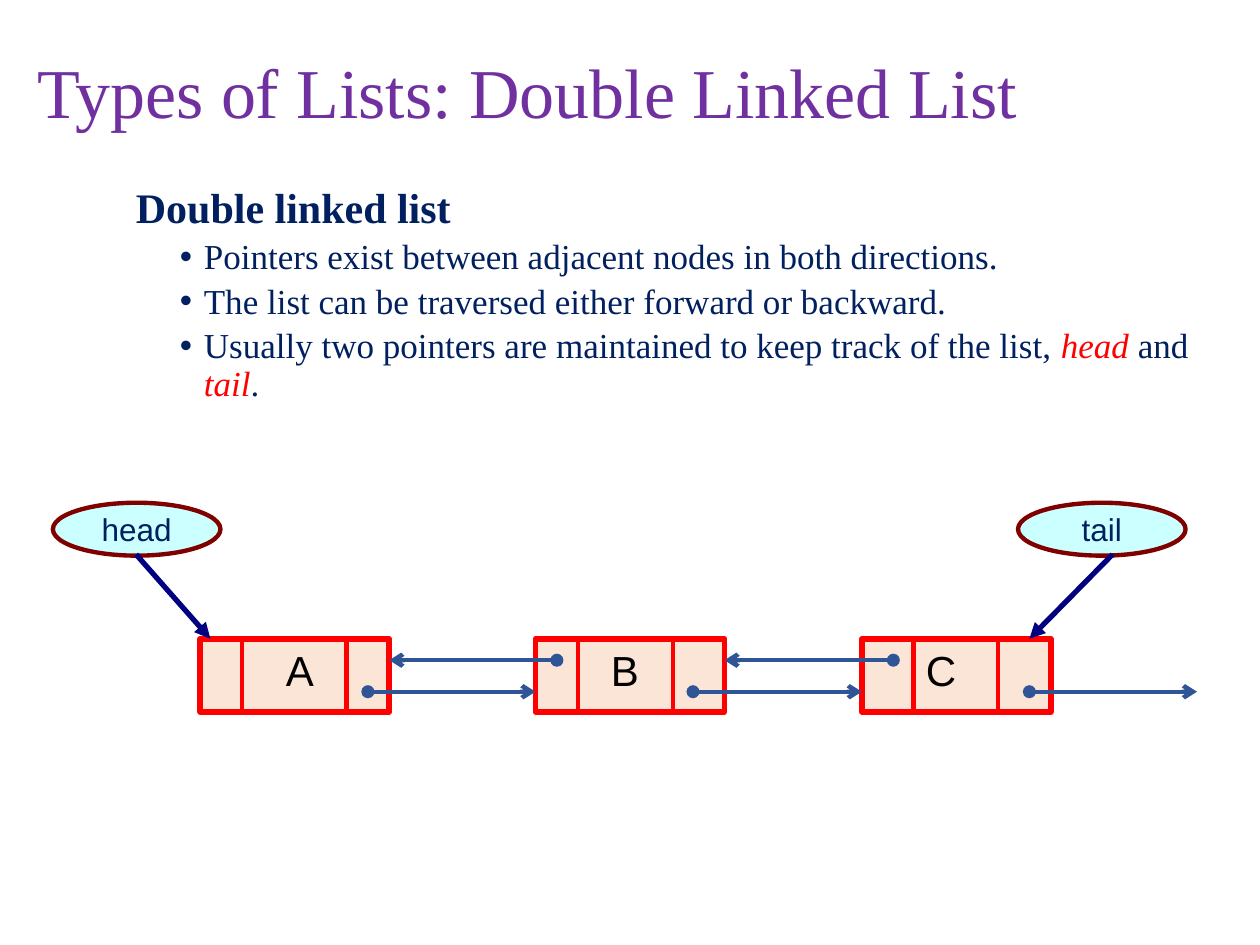
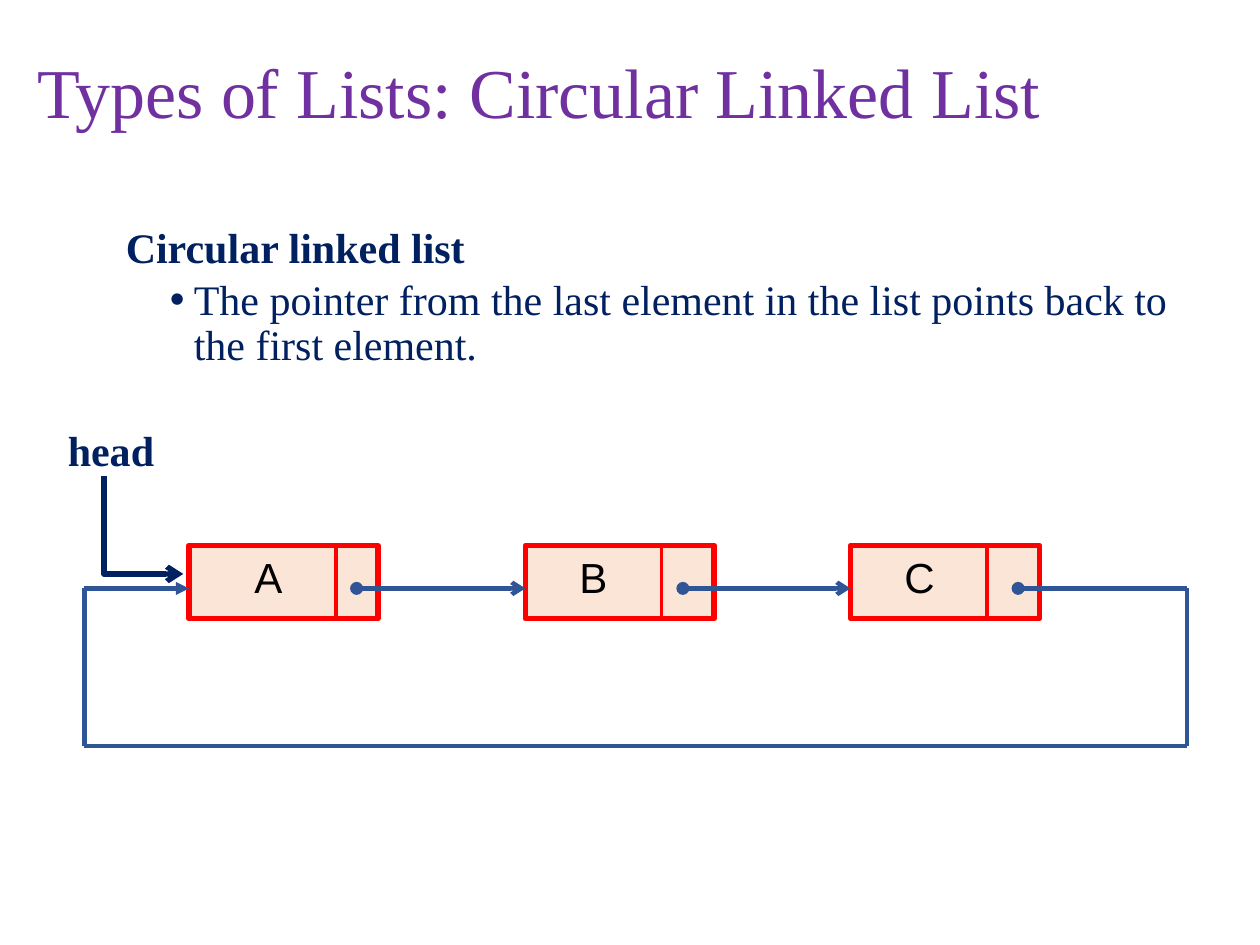
"""Two slides on double and circular linked lists."""
from lxml.etree import SubElement
from pptx import Presentation
from pptx.dml.color import RGBColor
from pptx.enum.shapes import MSO_CONNECTOR as Connector, MSO_SHAPE as Shape
from pptx.enum.text import MSO_ANCHOR as Anchor, PP_ALIGN as Align
from pptx.oxml.ns import qn
from pptx.util import Inches, Pt

PURPLE = RGBColor(0x70, 0x30, 0xA0)
NAVY = RGBColor(0x00, 0x20, 0x60)
DARK_BLUE = RGBColor(0x00, 0x00, 0x80)
LINK_BLUE = RGBColor(0x2F, 0x55, 0x97)
RED = RGBColor(0xFF, 0x00, 0x00)
MAROON = RGBColor(0x80, 0x00, 0x00)
PEACH = RGBColor(0xFB, 0xE5, 0xD6)
PALE_CYAN = RGBColor(0xCC, 0xFF, 0xFF)
BLACK = RGBColor(0x00, 0x00, 0x00)
SERIF, SANS = "Times New Roman", "Arial"
NODE_WIDTH, NODE_HEIGHT = 1.5, 0.58


def add_text(para, runs, size, font, color, bold=False):
    """Add runs to a paragraph; a run in a tuple is emphasised."""
    for run in runs:
        emphasised = isinstance(run, tuple)
        span = para.add_run()
        span.text = run[0] if emphasised else run
        span.font.size = Pt(size)
        span.font.name = font
        span.font.bold = bold
        span.font.italic = emphasised
        span.font.color.rgb = RED if emphasised else color


def add_line(page, start, end, color, width, head=None, tail=None, kind=Connector.STRAIGHT):
    """Draw a shadowless connector with optional line ends."""
    line = page.shapes.add_connector(kind, *map(Inches, (*start, *end)))
    line.line.color.rgb = color
    line.line.width = Pt(width)
    outline = line.line._get_or_add_ln()
    for tag, end_type in (("a:headEnd", head), ("a:tailEnd", tail)):
        if end_type:
            SubElement(outline, qn(tag), type=end_type)
    SubElement(line.element.spPr, qn("a:effectLst"))
    return line


deck = Presentation()
deck.slide_width, deck.slide_height = Inches(10), Inches(7.5)

topics = [
    {
        "name": "Double", "body": (0.58, 1.44), "bullet_size": 20,
        "bullets": [
            ["Pointers exist between adjacent nodes in both directions."],
            ["The list can be traversed either forward or backward."],
            ["Usually two pointers are maintained to keep track of the list, ",
             ("head ",), "and ", ("tail",), "."],
        ],
        "node_top": 5.07, "node_lefts": (1.59, 4.25, 6.84),
        "letter_lefts": (2.17, 4.75, 7.25), "divider_width": 2.5,
        "dividers": (1.92, 2.75, 4.59, 5.34, 7.25, 7.92),
    },
    {
        "name": "Circular", "body": (0.5, 1.75), "bullet_size": 24,
        "bullets": [["The pointer from the last element in the list points back to the first element."]],
        "node_top": 4.33, "node_lefts": (1.5, 4.17, 6.75),
        "letter_lefts": (1.92, 4.5, 7.08), "divider_width": 2.25,
        "dividers": (2.67, 5.25, 7.83),
    },
]

pages = []
for topic in topics:
    page = deck.slides.add_slide(deck.slide_layouts[6])
    pages.append(page)

    title = page.shapes.add_textbox(*map(Inches, (0.2, 0.21, 9.53, 1.1))).text_frame
    title.word_wrap = True
    title.vertical_anchor = Anchor.MIDDLE
    title.paragraphs[0].line_spacing = 0.9
    add_text(title.paragraphs[0], [f"Types of Lists: {topic['name']} Linked List"], 40, SERIF, PURPLE)

    body = page.shapes.add_textbox(*map(Inches, (*topic["body"], 9, 4.95))).text_frame
    body.word_wrap = True
    heading = body.paragraphs[0]
    heading._p.get_or_add_pPr().set("marL", str(Inches(0.4)))
    add_text(heading, [f"{topic['name']} linked list"], 24, SERIF, NAVY, bold=True)
    for runs in topic["bullets"]:
        para = body.add_paragraph()
        properties = para._p.get_or_add_pPr()
        properties.set("marL", str(Inches(0.94)))
        properties.set("indent", str(Inches(-0.19)))
        SubElement(properties, qn("a:buFont"), typeface=SANS)
        SubElement(properties, qn("a:buChar"), char="•")
        add_text(para, runs, topic["bullet_size"], SERIF, NAVY)
    for para in body.paragraphs:
        para.line_spacing = 0.9
        para.space_before = Pt(3.8)

    top = topic["node_top"]
    for left in topic["node_lefts"]:
        node = page.shapes.add_shape(
            Shape.RECTANGLE, *map(Inches, (left, top, NODE_WIDTH, NODE_HEIGHT)))
        node.shadow.inherit = False
        node.fill.solid()
        node.fill.fore_color.rgb = PEACH
        node.line.color.rgb = RED
        node.line.width = Pt(3.25)
    for x in topic["dividers"]:
        add_line(page, (x, top), (x, top + NODE_HEIGHT), RED, topic["divider_width"])
    for letter, left in zip("ABC", topic["letter_lefts"]):
        label = page.shapes.add_textbox(*map(Inches, (left, top, 0.67, 0.5))).text_frame
        label.word_wrap = True
        label.paragraphs[0].space_before = Pt(2.5)
        add_text(label.paragraphs[0], [letter], 24, SANS, BLACK)

double_page, circular_page = pages

for start, end in ((2.92, 4.25), (5.5, 6.84), (8.17, 9.5)):
    add_line(double_page, (start, 5.49), (end, 5.49), LINK_BLUE, 2.5, "oval", "arrow")
for start, end in ((3.09, 4.42), (5.75, 7.09)):
    add_line(double_page, (start, 5.24), (end, 5.24), LINK_BLUE, 2.5, "arrow", "oval")

for name, left, start, end in (("head", 0.42, 1.08, 1.67), ("tail", 8.08, 8.83, 8.17)):
    pointer = double_page.shapes.add_shape(Shape.OVAL, *map(Inches, (left, 3.99, 1.33, 0.42)))
    pointer.shadow.inherit = False
    pointer.fill.solid()
    pointer.fill.fore_color.rgb = PALE_CYAN
    pointer.line.color.rgb = MAROON
    pointer.line.width = Pt(2.5)
    frame = pointer.text_frame
    frame.word_wrap = False
    frame.vertical_anchor = Anchor.MIDDLE
    frame.paragraphs[0].alignment = Align.CENTER
    add_text(frame.paragraphs[0], [name], 18, SANS, NAVY)
    add_line(double_page, (start, 4.4), (end, 5.07), DARK_BLUE, 3, tail="triangle")

for start, end, tail in ((2.83, 4.17, "arrow"), (5.42, 6.75, "arrow"), (8.08, 9.42, None)):
    add_line(circular_page, (start, 4.67), (end, 4.67), LINK_BLUE, 2.5, "oval", tail)

return_path = [(9.42, 4.67), (9.42, 5.92), (0.67, 5.92), (0.67, 4.67), (1.5, 4.67)]
for start, end in zip(return_path, return_path[1:]):
    tail = "triangle" if end == return_path[-1] else None
    add_line(circular_page, start, end, LINK_BLUE, 2.5, tail=tail)

head_arrow = add_line(circular_page, (1.53, 3.85), (0.75, 4.48), NAVY, 3,
                      tail="arrow", kind=Connector.ELBOW)
head_properties = head_arrow.element.spPr
head_properties.find(qn("a:xfrm")).set("rot", str(270 * 60000))
head_properties.find(qn("a:prstGeom")).set("prst", "bentConnector2")

head_label = circular_page.shapes.add_textbox(*map(Inches, (0.44, 3.32, 0.94, 0.5))).text_frame
head_label.word_wrap = True
add_text(head_label.paragraphs[0], ["head"], 24, SERIF, NAVY, bold=True)

deck.save("out.pptx")
